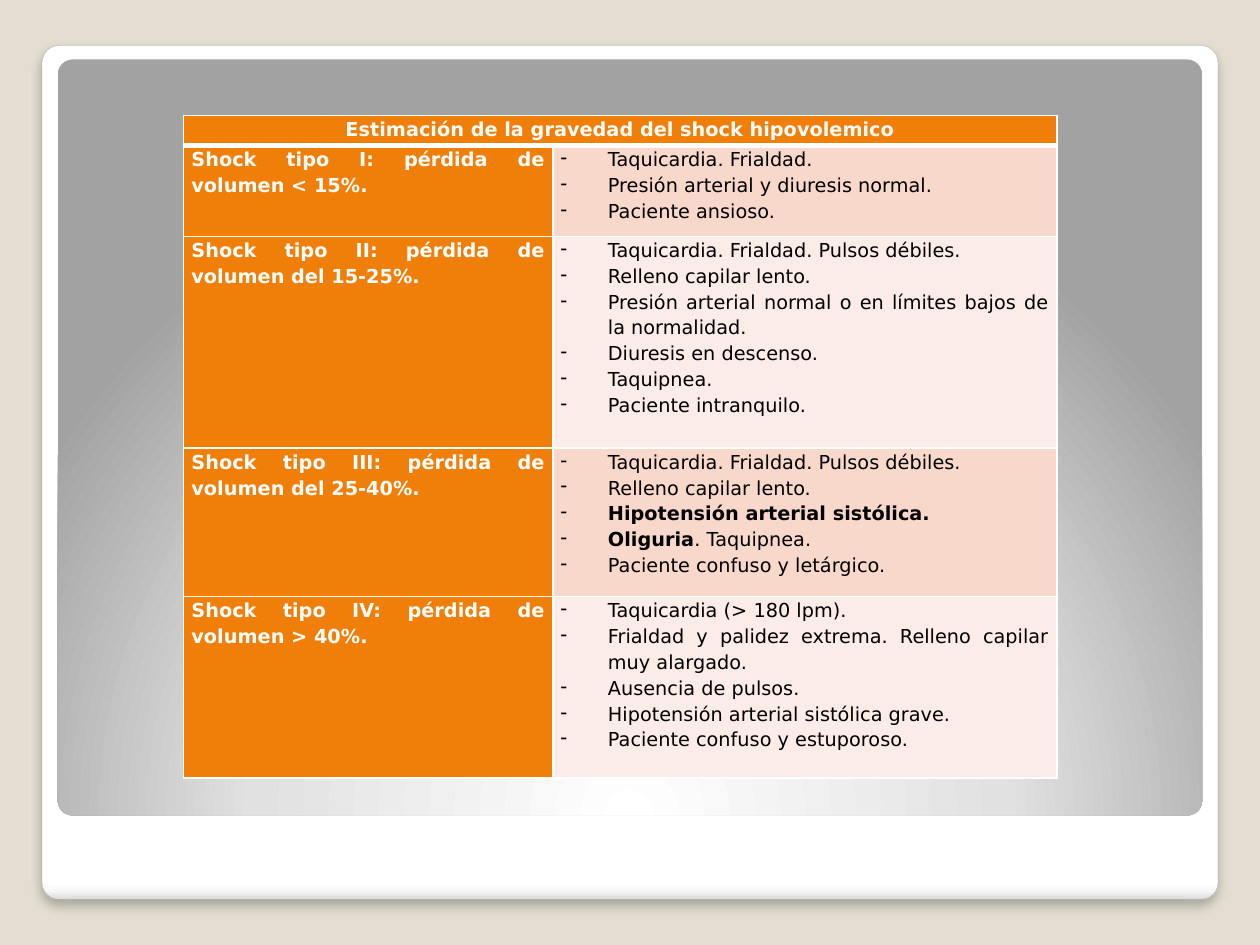
from dataclasses import dataclass

from lxml import etree
from pptx import Presentation
from pptx.dml.color import RGBColor
from pptx.enum import shapes, text
from pptx.oxml import parse_xml
from pptx.oxml.ns import nsdecls, qn
from pptx.util import Pt

HEADING = "Estimación de la gravedad del shock hipovolemico"
STAGES = [
    ("Shock tipo I: pérdida de volumen < 15%.", 51.84, [
        "Taquicardia. Frialdad.",
        "Presión arterial y diuresis normal.",
        "Paciente ansioso."]),
    ("Shock tipo II: pérdida de volumen del 15-25%.", 120.96, [
        "Taquicardia. Frialdad. Pulsos débiles.",
        "Relleno capilar lento.",
        "Presión arterial normal o en límites bajos de la normalidad.",
        "Diuresis en descenso.",
        "Taquipnea.",
        "Paciente intranquilo."]),
    ("Shock tipo III: pérdida de volumen del 25-40%.", 84.96, [
        "Taquicardia. Frialdad. Pulsos débiles.",
        "Relleno capilar lento.",
        ("Hipotensión arterial sistólica.", ""),
        ("Oliguria", ". Taquipnea."),
        "Paciente confuso y letárgico."]),
    ("Shock tipo IV: pérdida de volumen > 40%.", 103.68, [
        "Taquicardia (> 180 lpm).",
        "Frialdad y palidez extrema. Relleno capilar muy alargado.",
        "Ausencia de pulsos.",
        "Hipotensión arterial sistólica grave.",
        "Paciente confuso y estuporoso."]),
]


@dataclass(frozen=True)
class Theme:
    font: str = "DejaVu Sans"
    size: float = 11
    spacing: float = 1.15
    background: str = "E3DED1"
    frame_line: str = "A4A4A4"
    shadow: str = "000000"
    accent: str = "F07F09"
    bands: tuple = ("F9D8CC", "FCECE7")
    light: str = "FFFFFF"
    dark: str = "000000"
    frame_stops: tuple = ((0, "FFFFFF"), (98, "FFFFFF"), (99, "F7F7F7"), (100, "DADADA"))
    panel_stops: tuple = ((0, "FFFFFF"), (55, "E1E1E1"), (100, "A2A2A2"))


class SlideBuilder:
    def __init__(self, prs, theme):
        self.theme = theme
        self.slide = prs.slides.add_slide(prs.slide_layouts[6])
        fill = self.slide.background.fill
        fill.solid()
        fill.fore_color.rgb = RGBColor.from_string(theme.background)

    def rounded_panel(self, box, stops, direction):
        sp = self.slide.shapes.add_shape(
            shapes.MSO_SHAPE.ROUNDED_RECTANGLE, *map(Pt, box))
        sp.adjustments[0] = 0.02
        sp.shadow.inherit = False
        sp.line.fill.background()
        marks = "".join(
            f'<a:gs pos="{pos * 1000}"><a:srgbClr val="{color}"/></a:gs>'
            for pos, color in stops)
        sp._element.spPr.insert(2, parse_xml(
            f'<a:gradFill {nsdecls("a")} rotWithShape="1">'
            f'<a:gsLst>{marks}</a:gsLst>{direction}</a:gradFill>'))
        return sp

    def outline(self, sp, color, width):
        sp.line.color.rgb = RGBColor.from_string(color)
        sp.line.width = Pt(width)

    def drop_shadow(self, sp, alpha, blur, distance):
        effects = sp._element.spPr.find(qn("a:effectLst"))
        effects.append(parse_xml(
            f'<a:outerShdw {nsdecls("a")} blurRad="{Pt(blur)}" dist="{Pt(distance)}" '
            f'dir="5400000" algn="t" rotWithShape="0"><a:srgbClr val="{self.theme.shadow}">'
            f'<a:alpha val="{alpha * 1000}"/></a:srgbClr></a:outerShdw>'))

    def table(self, left, top, widths, heights):
        frame = self.slide.shapes.add_table(
            len(heights), len(widths), Pt(left), Pt(top), Pt(sum(widths)), Pt(sum(heights)))
        table = frame.table
        for column, width in zip(table.columns, widths):
            column.width = Pt(width)
        for row, height in zip(table.rows, heights):
            row.height = Pt(height)
        return table

    def cell(self, cell, color, top=1, bottom=1):
        cell.margin_left = cell.margin_right = Pt(4.5)
        cell.margin_top = cell.margin_bottom = 0
        cell.fill.solid()
        cell.fill.fore_color.rgb = RGBColor.from_string(color)
        borders = (("lnL", 1), ("lnR", 1), ("lnT", top), ("lnB", bottom))
        for i, (tag, width) in enumerate(borders):
            cell._tc.tcPr.insert(i, parse_xml(
                f'<a:{tag} {nsdecls("a")} w="{Pt(width)}"><a:solidFill>'
                f'<a:srgbClr val="{self.theme.light}"/></a:solidFill></a:{tag}>'))

    def paragraph(self, p, runs, color, align=text.PP_ALIGN.JUSTIFY):
        p.alignment = align
        p.line_spacing = self.theme.spacing
        for words, bold in runs:
            r = p.add_run()
            r.text = words
            r.font.name = self.theme.font
            r.font.size = Pt(self.theme.size)
            r.font.bold = bold
            r.font.color.rgb = RGBColor.from_string(color)

    def dash_list(self, tf, items):
        for i, item in enumerate(items):
            p = tf.paragraphs[0] if i == 0 else tf.add_paragraph()
            strong, plain = item if isinstance(item, tuple) else ("", item)
            runs = [(words, bold) for words, bold in ((strong, True), (plain, False)) if words]
            self.paragraph(p, runs, self.theme.dark)
            pPr = p._p.get_or_add_pPr()
            pPr.set("marL", str(Pt(27)))
            pPr.set("indent", str(Pt(-27)))
            etree.SubElement(pPr, qn("a:buChar")).set("char", "-")


def main():
    prs = Presentation()
    prs.slide_width, prs.slide_height = Pt(720), Pt(540)
    theme = Theme()
    s = SlideBuilder(prs, theme)

    frame = s.rounded_panel((24, 26, 672, 488), theme.frame_stops,
                            '<a:lin ang="5400000" scaled="0"/>')
    s.outline(frame, theme.frame_line, 0.16)
    s.drop_shadow(frame, alpha=25, blur=6, distance=4)
    s.rounded_panel((33, 34, 654, 432), theme.panel_stops,
                    '<a:path path="circle"><a:fillToRect l="50000" t="175000" '
                    'r="50000" b="-75000"/></a:path>')

    heights = [17.28] + [height for _, height, _ in STAGES]
    table = s.table(104.9, 66, (211, 288), heights)
    header = table.cell(0, 0)
    header.merge(table.cell(0, 1))
    for cell in table.rows[0].cells:
        s.cell(cell, theme.accent, bottom=3)
    s.paragraph(header.text_frame.paragraphs[0], [(HEADING, True)],
                theme.light, text.PP_ALIGN.CENTER)

    for i, (stage, _, signs) in enumerate(STAGES):
        label, details = table.rows[i + 1].cells
        top = 3 if i == 0 else 1
        s.cell(label, theme.accent, top)
        s.cell(details, theme.bands[i % 2], top)
        s.paragraph(label.text_frame.paragraphs[0], [(stage, True)], theme.light)
        s.dash_list(details.text_frame, signs)

    prs.save("out.pptx")


if __name__ == "__main__":
    main()
